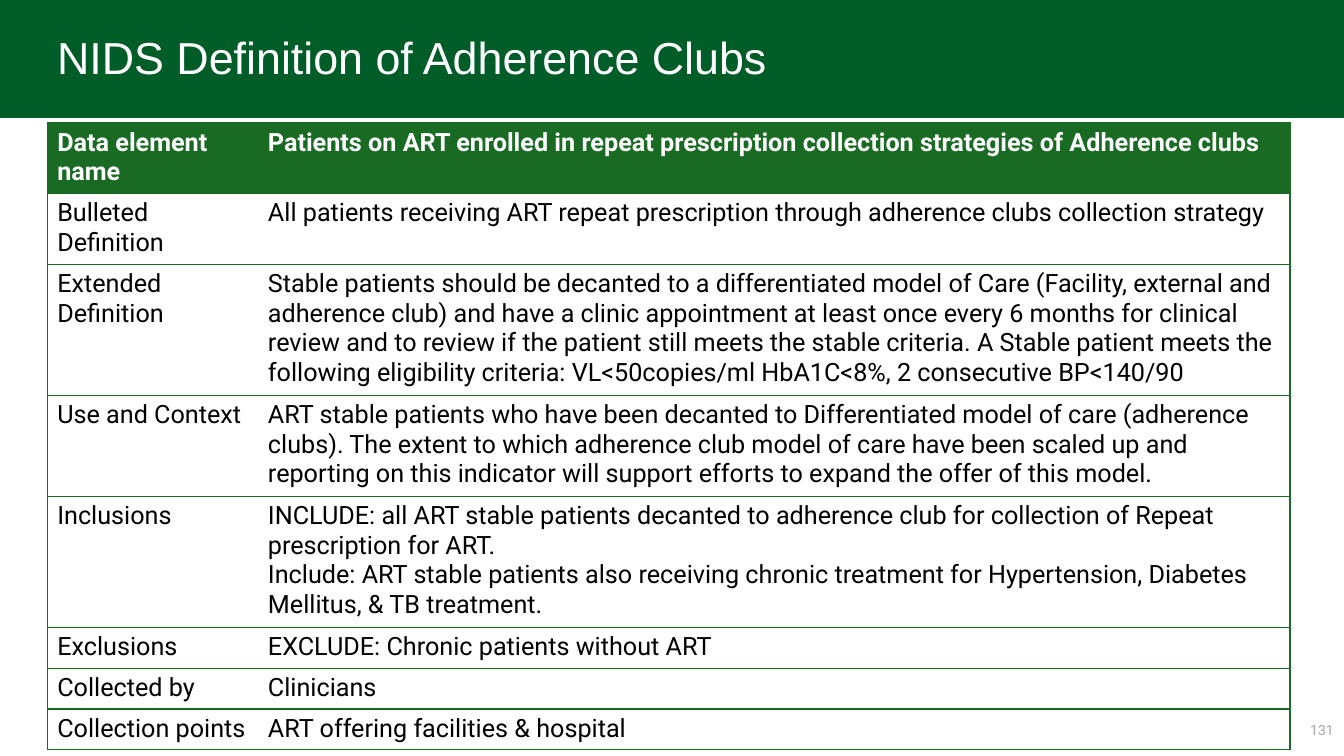
"""Build the slide that defines adherence clubs in the NIDS."""
from lxml.etree import SubElement
from pptx import Presentation
from pptx.dml.color import RGBColor
from pptx.enum.shapes import MSO_SHAPE as Shape
from pptx.enum.text import MSO_ANCHOR as Anchor, PP_ALIGN as Align
from pptx.oxml.ns import qn
from pptx.util import Cm, Pt

TITLE = "NIDS Definition of Adherence Clubs"
PAGE_NUMBER = "131"
DEFINITIONS = [
    ("Data element\nname",
     "Patients on ART enrolled in repeat prescription collection strategies of Adherence clubs"),
    ("Bulleted Definition",
     "All patients receiving ART repeat prescription through adherence clubs collection strategy"),
    ("Extended Definition",
     "Stable patients should be decanted to a differentiated model of Care (Facility, external and "
     "adherence club) and have a clinic appointment at least once every 6 months for clinical review "
     "and to review if the patient still meets the stable criteria. A Stable patient meets the "
     "following eligibility criteria: VL<50copies/ml HbA1C<8%, 2 consecutive BP<140/90"),
    ("Use and Context",
     "ART stable patients who have been decanted to Differentiated model of care (adherence clubs). "
     "The extent to which adherence club model of care have been scaled up and reporting on this "
     "indicator will support efforts to expand the offer of this model."),
    ("Inclusions",
     "INCLUDE: all ART stable patients decanted to adherence club for collection of Repeat\n"
     "prescription for ART.\n"
     "Include: ART stable patients also receiving chronic treatment for Hypertension, Diabetes "
     "Mellitus, & TB treatment."),
    ("Exclusions", "EXCLUDE: Chronic patients without ART"),
    ("Collected by", "Clinicians"),
    ("Collection points", "ART offering facilities & hospital"),
]
COLORS = {"banner": "005D28", "green": "196B24", "white": "FFFFFF",
          "black": "000000", "gray": "A6A6A6"}
COLUMN_WIDTHS = (5.31, 26.01)
ROW_HEIGHT = 1.03


def rgb(name):
    return RGBColor.from_string(COLORS[name])


def style(frame, font, size, color, bold=False, align=Align.LEFT, spacing=None):
    for paragraph in frame.paragraphs:
        paragraph.alignment = align
        paragraph.line_spacing = spacing
        for run in paragraph.runs:
            run.font.name = font
            run.font.size = Pt(size)
            run.font.bold = bold
            run.font.color.rgb = rgb(color)


def add_label(slide, text, box, **look):
    frame = slide.shapes.add_textbox(*map(Cm, box)).text_frame
    frame.word_wrap = True
    frame.vertical_anchor = Anchor.MIDDLE
    frame.text = text
    style(frame, **look)


def set_borders(cell, visible):
    properties = cell._tc.get_or_add_tcPr()
    for side in "LRTB":
        line = SubElement(properties, qn(f"a:ln{side}"), w=str(Pt(1)))
        if side in visible:
            fill = SubElement(line, qn("a:solidFill"))
            SubElement(fill, qn("a:srgbClr"), val=COLORS["green"])
        else:
            SubElement(line, qn("a:noFill"))


def add_definitions(slide):
    table = slide.shapes.add_table(
        len(DEFINITIONS), len(COLUMN_WIDTHS), Cm(1.19), Cm(3.1),
        Cm(sum(COLUMN_WIDTHS)), Cm(ROW_HEIGHT * len(DEFINITIONS))).table
    for column, width in zip(table.columns, COLUMN_WIDTHS):
        column.width = Cm(width)
    for row, texts in enumerate(DEFINITIONS):
        header = row == 0
        table.rows[row].height = Cm(ROW_HEIGHT)
        for column, text in enumerate(texts):
            cell = table.cell(row, column)
            cell.text_frame.text = text
            style(cell.text_frame, "Roboto", 18, "white" if header else "black", bold=header)
            set_borders(cell, "TB" + "LR"[column])
            cell.fill.solid()
            cell.fill.fore_color.rgb = rgb("green" if header else "white")


def main():
    deck = Presentation()
    deck.slide_width, deck.slide_height = Cm(33.87), Cm(19.05)
    slide = deck.slides.add_slide(deck.slide_layouts[6])

    banner = slide.shapes.add_shape(Shape.RECTANGLE, 0, 0, deck.slide_width, Cm(2.97))
    banner.shadow.inherit = False
    banner.fill.solid()
    banner.fill.fore_color.rgb = rgb("banner")
    banner.line.fill.background()

    add_label(slide, PAGE_NUMBER, (26.24, 17.88, 7.62, 1.02),
              font="Roboto", size=10, color="gray", align=Align.RIGHT)
    add_label(slide, TITLE, (1.19, 0.38, 27.64, 2.24),
              font="Arial", size=32, color="white", spacing=0.9)
    add_definitions(slide)
    deck.save("out.pptx")


if __name__ == "__main__":
    main()
